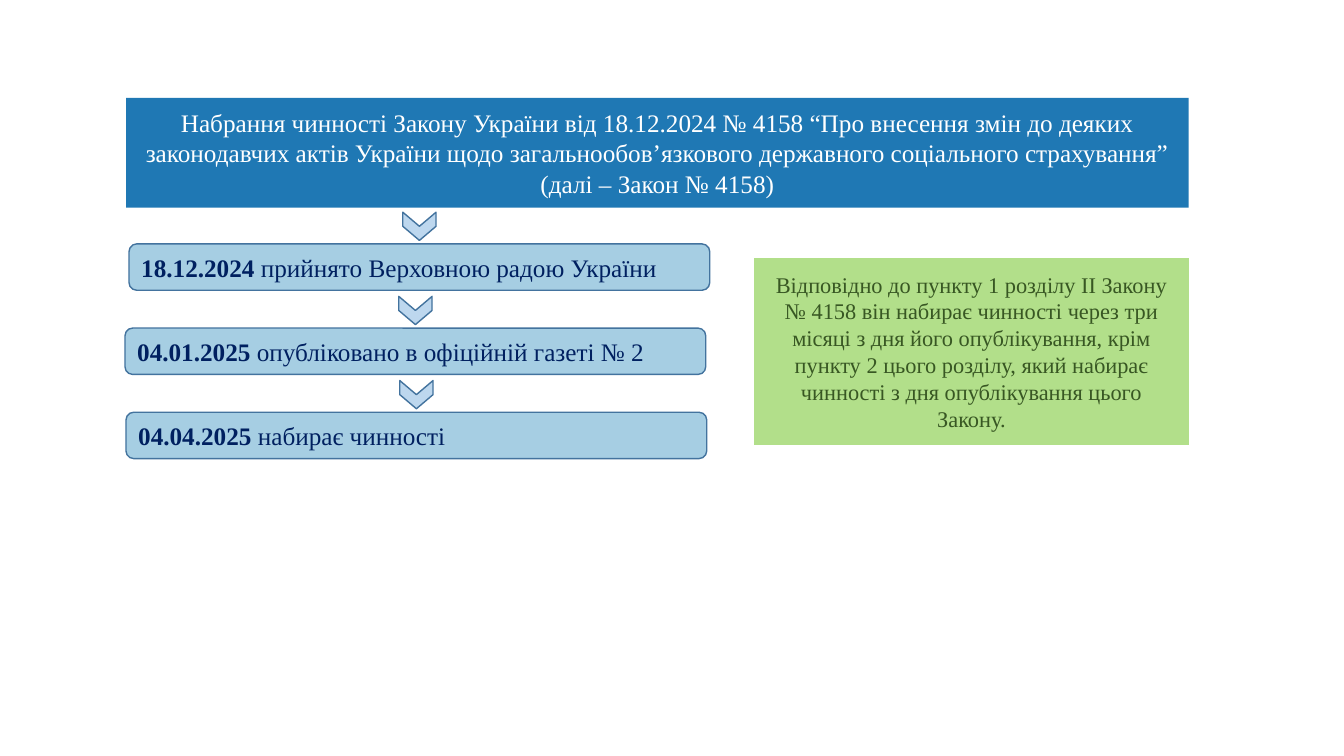
from dataclasses import dataclass

from pptx import Presentation
from pptx.dml.color import RGBColor
from pptx.enum import shapes, text
from pptx.util import Inches, Pt


@dataclass(frozen=True)
class Theme:
    font: str = "Times New Roman"
    large: int = 18
    medium: int = 16
    banner: str = "1F78B4"
    banner_text: str = "FFFFFF"
    step: str = "A6CEE3"
    step_text: str = "002060"
    arrow: str = "BDD7EE"
    outline: str = "43739E"
    note: str = "B2DF8A"
    note_text: str = "385723"


THEME = Theme()
KIND = shapes.MSO_SHAPE

BANNER = (
    "Набрання чинності Закону України від 18.12.2024 № 4158 “Про внесення змін "
    "до деяких законодавчих актів України щодо загальнообов’язкового державного "
    "соціального страхування” (далі – Закон № 4158)"
)
# Left edge, date and event of each stage
STEPS = [
    (1.28, "18.12.2024 ", "прийнято Верховною радою України"),
    (1.24, "04.01.2025 ", "опубліковано в офіційній газеті № 2"),
    (1.25, "04.04.2025 ", "набирає чинності"),
]
NOTE = (
    "Відповідно до пункту 1 розділу ІІ Закону № 4158 він набирає чинності через "
    "три місяці з дня його опублікування, крім пункту 2 цього розділу, який "
    "набирає чинності з дня опублікування цього Закону."
)


def paint(shape, fill, outline=None):
    shape.fill.solid()
    shape.fill.fore_color.rgb = RGBColor.from_string(fill)
    if outline:
        shape.line.color.rgb = RGBColor.from_string(outline)
        shape.line.width = Pt(1)
    else:
        shape.line.fill.background()


def add_box(page, kind, box, fill, outline=None):
    shape = page.shapes.add_shape(kind, *map(Inches, box))
    shape.shadow.inherit = False
    paint(shape, fill, outline)
    return shape


def write(shape, spans, size, color, align):
    """Fill the shape with one paragraph made of (words, bold) spans."""
    frame = shape.text_frame
    frame.word_wrap = True
    frame.auto_size = text.MSO_AUTO_SIZE.NONE
    frame.vertical_anchor = text.MSO_ANCHOR.MIDDLE
    para = frame.paragraphs[0]
    para.alignment = align
    para.font.name = THEME.font
    para.font.size = Pt(size)
    para.font.color.rgb = RGBColor.from_string(color)
    for words, bold in spans:
        span = para.add_run()
        span.text = words
        span.font.bold = bold


def add_banner(page, box):
    title = page.shapes.title
    title.left, title.top, title.width, title.height = map(Inches, box)
    paint(title, THEME.banner)
    write(title, [(BANNER, False)], THEME.large, THEME.banner_text, text.PP_ALIGN.CENTER)


def add_step(page, box, date, event):
    """Place a stage bar with a downward chevron centred above it."""
    left, top, width, height = box
    bar = add_box(page, KIND.FLOWCHART_ALTERNATE_PROCESS, box, THEME.step, THEME.outline)
    write(bar, [(date, True), (event, False)], THEME.large, THEME.step_text,
          text.PP_ALIGN.LEFT)
    arrow_width, arrow_height = 0.28, 0.33
    arrow_box = (left + (width - arrow_width) / 2, top - 0.34, arrow_width, arrow_height)
    arrow = add_box(page, KIND.CHEVRON, arrow_box, THEME.arrow, THEME.outline)
    arrow.rotation = 90


def add_timeline(page, top, width, height, pitch):
    for row, (left, date, event) in enumerate(STEPS):
        add_step(page, (left, top + row * pitch, width, height), date, event)


def add_note(page, box):
    note = add_box(page, KIND.FLOWCHART_PROCESS, box, THEME.note)
    write(note, [(NOTE, False)], THEME.medium, THEME.note_text, text.PP_ALIGN.CENTER)


def main():
    deck = Presentation()
    deck.slide_width, deck.slide_height = Inches(13.33), Inches(7.5)
    page = deck.slides.add_slide(deck.slide_layouts.get_by_name("Title Only"))
    add_banner(page, (1.25, 0.97, 10.54, 1.09))
    add_timeline(page, top=2.42, width=5.76, height=0.46, pitch=0.835)
    add_note(page, (7.48, 2.56, 4.31, 1.85))
    deck.save("out.pptx")


if __name__ == "__main__":
    main()
